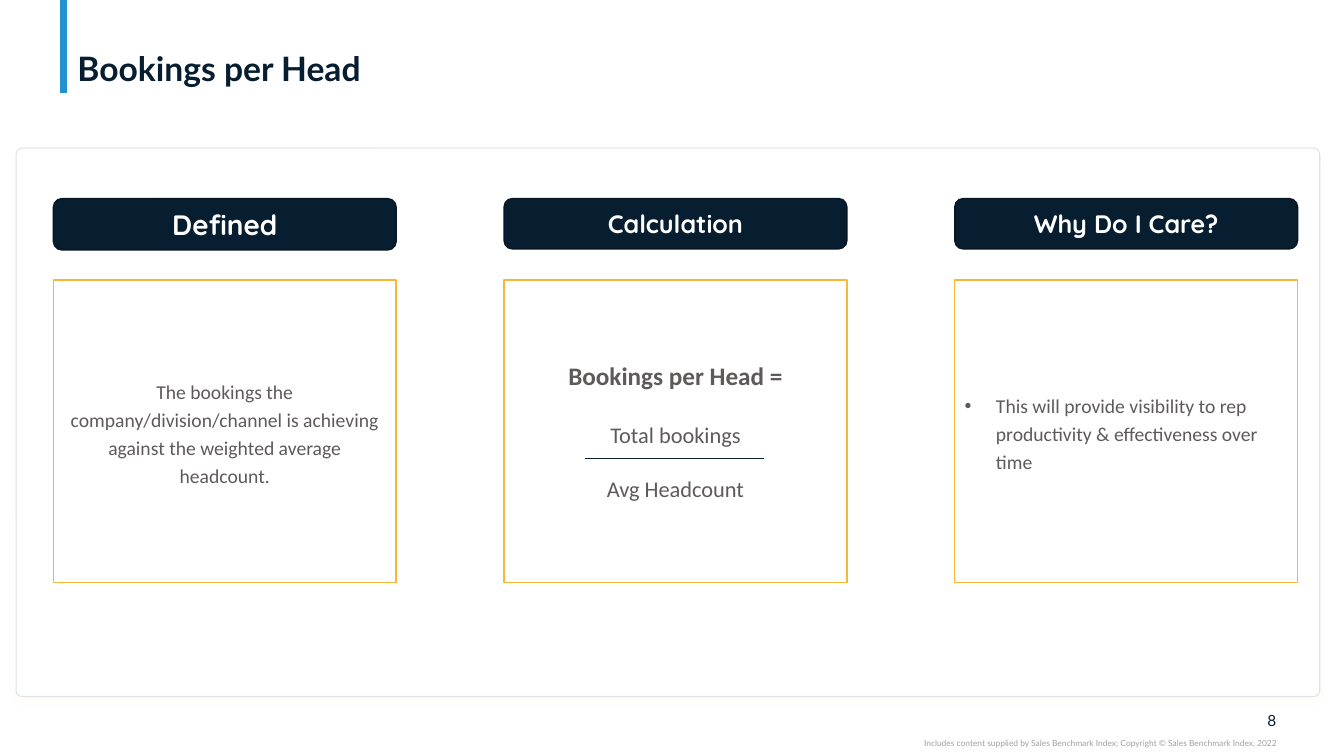
import pptx
import pptx.util
import pptx.dml.color
import pptx.enum.shapes
import pptx.enum.text
import pptx.oxml.ns
import lxml.etree

Inches = pptx.util.Inches
Pt = pptx.util.Pt
Align = pptx.enum.text.PP_ALIGN
Anchor = pptx.enum.text.MSO_ANCHOR
Kind = pptx.enum.shapes.MSO_SHAPE

HUES = {
    "navy": "071E31", "edge": "051624", "blue": "2391CF", "gold": "F8B737",
    "grey": "5F5A5A", "pale": "A0A0A0", "rim": "E0E3E6", "white": "FFFFFF",
}


def hue(name):
    return pptx.dml.color.RGBColor.from_string(HUES[name])


def node(parent, tag, **attrs):
    return lxml.etree.SubElement(parent, pptx.oxml.ns.qn(tag), attrs)


def write(frame, text, size=14, font="Calibri", color="grey", bold=False,
          align=Align.CENTER, lead=None, before=None, bullet=None, more=False):
    para = frame.add_paragraph() if more else frame.paragraphs[0]
    para.alignment = align
    if lead:
        para.line_spacing = lead
    if before:
        para.space_before = Pt(before)
    if bullet:
        props = para._p.get_or_add_pPr()
        props.set("marL", str(Inches(0.31)))
        props.set("indent", str(-Inches(0.31)))
        node(props, "a:buFont", typeface="Arial")
        node(props, "a:buChar", char=bullet)
    run = para.add_run()
    run.text = text
    run.font.size = Pt(size)
    run.font.name = font
    run.font.bold = bold
    run.font.color.rgb = hue(color)


def label(slide, box, text, anchor=Anchor.TOP, side=0, **style):
    frame = slide.shapes.add_textbox(*map(Inches, box)).text_frame
    frame.word_wrap = True
    frame.vertical_anchor = anchor
    frame.margin_left = frame.margin_right = Inches(side)
    frame.margin_top = frame.margin_bottom = 0
    write(frame, text, **style)


def block(slide, box, kind, fill, line, width=1):
    shape = slide.shapes.add_shape(kind, *map(Inches, box))
    shape.shadow.inherit = False
    shape.fill.solid()
    shape.fill.fore_color.rgb = hue(fill)
    shape.line.color.rgb = hue(line)
    shape.line.width = Pt(width)
    shape.text_frame.word_wrap = True
    shape.text_frame.vertical_anchor = Anchor.MIDDLE
    return shape


def rule(slide, ends, color, width):
    line = slide.shapes.add_connector(
        pptx.enum.shapes.MSO_CONNECTOR.STRAIGHT, *map(Inches, ends))
    line.line.color.rgb = hue(color)
    line.line.width = Pt(width)
    node(line._element.spPr, "a:effectLst")


def header(slide, box):
    left, top, width, height = box
    rule(slide, (left - 0.04, 0, left - 0.04, 0.92), "blue", 5)
    label(slide, box, "Bookings per Head", anchor=Anchor.BOTTOM, side=0.1,
          size=24, font="Lato", color="navy", bold=True,
          align=Align.LEFT, lead=0.9)


def footer(slide, box):
    left, top, width, height = box
    right = left + width
    label(slide, (right - 0.33, top, 0.33, 0.19), "8", anchor=Anchor.MIDDLE,
          size=11, font="Lato", color="navy", align=Align.RIGHT)
    label(slide, (left, top + 0.27, width, 0.1),
          "Includes content supplied by Sales Benchmark Index; "
          "Copyright © Sales Benchmark Index, 2022",
          size=6, font="Lato", color="pale", align=Align.RIGHT)


def panel(slide, box):
    card = block(slide, box, Kind.ROUNDED_RECTANGLE, "white", "rim", 0.75)
    card.adjustments[0] = 0.011
    effects = card._element.spPr.find(pptx.oxml.ns.qn("a:effectLst"))
    shade = node(effects, "a:outerShdw", blurRad=str(Pt(6)), dist=str(Pt(4)),
                 dir="5400000", algn="t", rotWithShape="0")
    tint = node(shade, "a:srgbClr", val=HUES["gold"])
    node(tint, "a:alpha", val="4000")


def column(slide, box, title, size, tall):
    left, top, width, height = box
    head = block(slide, (left, top, width, tall),
                 Kind.ROUNDED_RECTANGLE, "navy", "edge")
    write(head.text_frame, title, size=size, font="Quicksand",
          color="white", bold=True)
    body = block(slide, (left, top + 0.81, width, height - 0.81),
                 Kind.RECTANGLE, "white", "gold")
    return body.text_frame


def columns(slide, box):
    left, top, width, height = box
    wide = 3.4
    step = (width - wide) / 2
    heads = [("Defined", 20, 0.51), ("Calculation", 18, 0.5),
             ("Why Do I Care?", 18, 0.5)]
    what, calc, why = [
        column(slide, (left + i * step, top, wide, height), *head)
        for i, head in enumerate(heads)]
    write(what, "The bookings the company/division/channel is achieving "
          "against the weighted average headcount.", lead=1.2)
    write(calc, "Bookings per Head =", size=18, bold=True)
    write(calc, "Total bookings", size=16, before=22, more=True)
    write(calc, "Avg Headcount", size=16, before=19.5, more=True)
    write(why, "This will provide visibility to rep productivity & "
          "effectiveness over time", align=Align.LEFT, lead=1.2, bullet="•")
    start = left + step + 0.8
    rule(slide, (start, top + 2.58, start + 1.78, top + 2.58), "navy", 0.25)


def main():
    deck = pptx.Presentation()
    deck.slide_width = Inches(13.33)
    deck.slide_height = Inches(7.5)
    slide = deck.slides.add_slide(deck.slide_layouts[6])
    header(slide, (0.67, 0.04, 11.99, 0.84))
    footer(slide, (7.5, 7.05, 5.16, 0.37))
    panel(slide, (0.16, 1.47, 12.93, 5.44))
    columns(slide, (0.53, 1.97, 12.34, 3.81))
    deck.save("out.pptx")


if __name__ == "__main__":
    main()
